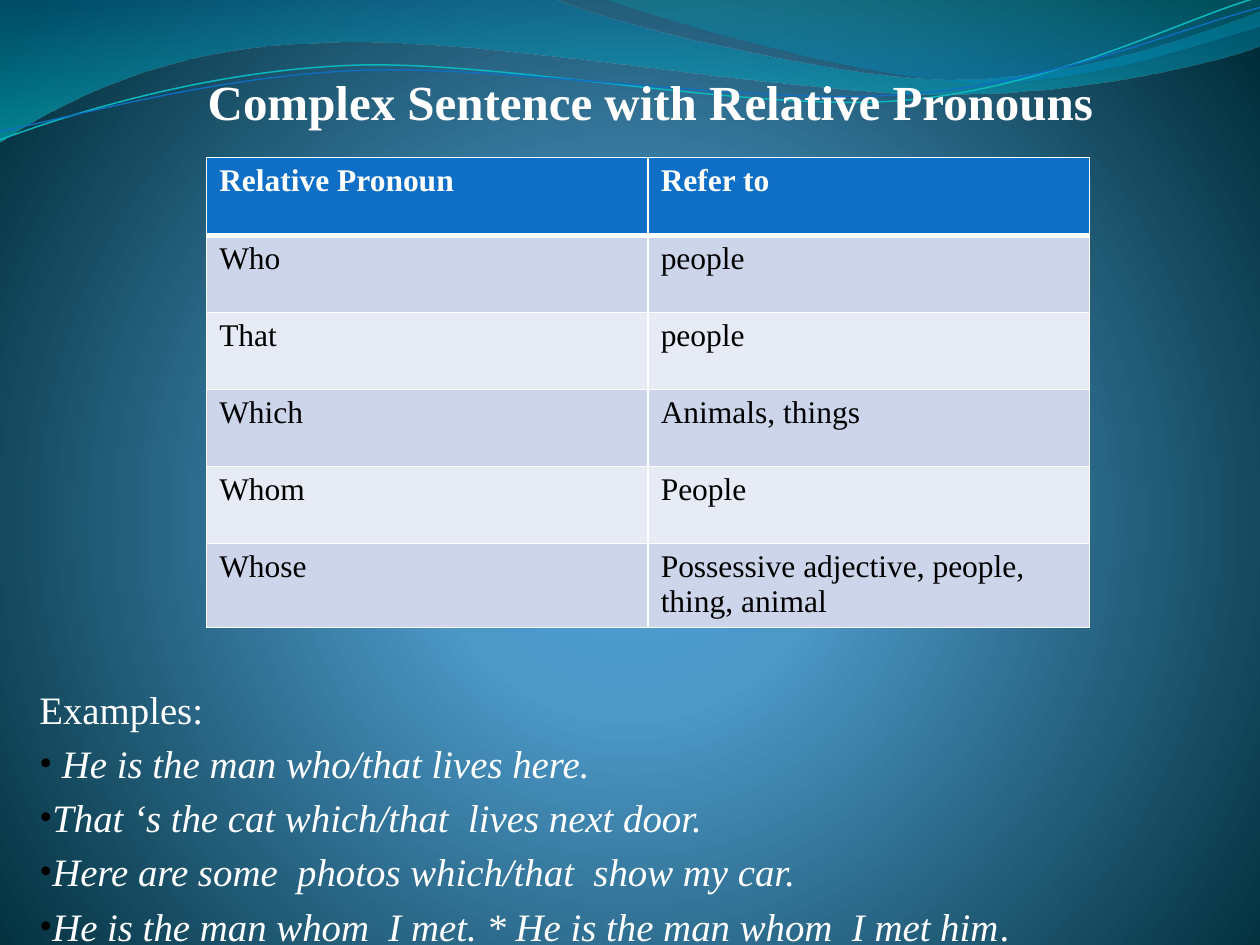
from lxml.etree import SubElement
from pptx import Presentation
from pptx.dml.color import RGBColor
from pptx.enum.text import MSO_ANCHOR, PP_ALIGN
from pptx.oxml import parse_xml
from pptx.oxml.ns import nsdecls, qn
from pptx.util import Pt

# Content
TITLE = "Complex Sentence with Relative Pronouns"
ROWS = [
    ("Relative Pronoun", "Refer to"),
    ("Who", "people"),
    ("That", "people"),
    ("Which", "Animals, things"),
    ("Whom", "People"),
    ("Whose", "Possessive adjective, people, thing, animal"),
]
HEADING = "Examples:"
EXAMPLES = [
    (" He is the man who/that lives here. ", ""),
    ("That ‘s the cat which/that  lives next door. ", ""),
    ("Here are some  photos which/that  show my car.", ""),
    ("He is the man whom  I met. * He is the man whom  I met him", "."),
]

FONT = "Times New Roman"
COLORS = {
    "white": "FFFFFF", "black": "000000", "header": "0F6FC6",
    "band_dark": "CCD5EA", "band_light": "E7EBF5",
    "teal_line": "0AB8BF", "blue_line": "0F6FC6",
    "glow": "4AA0D6", "sky": "4C98C7", "deep": "002C38",
    "wave_blue": "0074A1", "wave_teal": "00C6CF",
    "crest_teal": "00A1A9", "crest_blue": "008BBF",
}

# Curves: a start point, then steps of one point (straight) or three (Bezier)
WAVE = [(0, 0), [(316.8, -0.7)],
        [(342.7, 12.2), (478.1, 45.4), (545.8, 45.4)],
        [(614.2, 45.4), (689.8, 18.7), (720, 6.5)], [(720.7, 25.9)],
        [(707.8, 31.7), (626.4, 54.7), (537.1, 54)],
        [(447.8, 54), (275, 20.2), (185, 24.5)],
        [(92.9, 25.9), (33.1, 59.8), (-0.7, 81.4)]]
CREST = [(344.9, -0.7), [(366.5, 7.9), (491, 44.6), (553.7, 46.8)],
         [(616.3, 49.7), (691.9, 23), (720, 15.1)], [(720, 0)]]
TEAL_CURVE = [(0, 79.9), [(34.6, 67), (113.8, 41), (199.4, 37.4)],
              [(284.4, 33.8), (427, 64.1), (513.4, 57.6)],
              [(599.8, 51.1), (675.4, 10.8), (718.6, -1.4)]]
BLUE_CURVE = [(0, 74.9), [(33.8, 69.1), (118.1, 43.9), (203.8, 40.3)],
              [(290.2, 36.7), (429.8, 60.5), (516.2, 54)],
              [(601.9, 48.2), (677.5, 15.1), (720, 4.3)]]


def rgb(name):
    return RGBColor.from_string(COLORS[name])


def gradient(stops, direction):
    """Gradient fill from (position, color, opacity) stops, in percent."""
    marks = "".join(
        f'<a:gs pos="{pos * 1000}"><a:srgbClr val="{COLORS[color]}">'
        f'<a:alpha val="{opacity * 1000}"/></a:srgbClr></a:gs>'
        for pos, color, opacity in stops)
    return (f'<a:gradFill {nsdecls("a")} rotWithShape="1"><a:gsLst>{marks}</a:gsLst>'
            f'{direction}</a:gradFill>')


def add_curve(page, curve, stops=None, line=None, width=0):
    start, *steps = curve
    points = [(Pt(x), Pt(y)) for step in steps for x, y in step]
    builder = page.shapes.build_freeform(Pt(start[0]), Pt(start[1]))
    builder.add_line_segments(points, close=bool(stops))
    shape = builder.convert_to_shape()
    # Join each three straight segments of a Bezier step into one curve
    segments = iter(list(shape._element.spPr.iter(qn("a:lnTo"))))
    for step in steps:
        parts = [next(segments) for _ in step]
        if len(parts) == 3:
            bezier = parse_xml(f'<a:cubicBezTo {nsdecls("a")}/>')
            parts[0].addprevious(bezier)
            for part in parts:
                bezier.append(part[0])
                part.getparent().remove(part)
    shape.shadow.inherit = False
    shape.fill.background()
    if stops:
        shape.line.fill.background()
        empty = shape._element.spPr.find(qn("a:noFill"))
        fill = parse_xml(gradient(stops, '<a:lin ang="5400000" scaled="0"/>'))
        empty.getparent().replace(empty, fill)
    else:
        shape.line.color.rgb = rgb(line)
        shape.line.width = Pt(width)


def add_text(para, text, size=18, color="white", bold=False, italic=False):
    span = para.add_run()
    span.text = text
    span.font.name = FONT
    span.font.size = Pt(size)
    span.font.bold = bold
    span.font.italic = italic
    span.font.color.rgb = rgb(color)


def add_box(page, left, top, width, height, anchor):
    box = page.shapes.add_textbox(Pt(left), Pt(top), Pt(width), Pt(height))
    frame = box.text_frame
    frame.word_wrap = True
    frame.vertical_anchor = anchor
    frame.margin_left = frame.margin_top = frame.margin_bottom = 0
    frame.margin_right = Pt(1.4)
    return frame


def add_bullet(para):
    props = para._p.get_or_add_pPr()
    color = SubElement(props, qn("a:buClr"))
    SubElement(color, qn("a:srgbClr"), val=COLORS["black"])
    SubElement(props, qn("a:buSzPct"), val="95000")
    SubElement(props, qn("a:buFont"), typeface=FONT)
    SubElement(props, qn("a:buChar"), char="•")


def set_borders(cell, widths):
    props = cell._tc.get_or_add_tcPr()
    for index, (side, width) in enumerate(widths.items()):
        props.insert(index, parse_xml(
            f'<a:{side} {nsdecls("a")} w="{Pt(width)}"><a:solidFill>'
            f'<a:srgbClr val="{COLORS["white"]}"/></a:solidFill></a:{side}>'))


deck = Presentation()
deck.slide_width, deck.slide_height = Pt(720), Pt(540)
page = deck.slides.add_slide(deck.slide_layouts[6])

# Background glow
glow = gradient(
    [(0, "glow", 100), (25, "sky", 100), (100, "deep", 100)],
    '<a:path path="circle"><a:fillToRect l="10000" t="110000" r="10000" b="100000"/></a:path>')
page._element.cSld.insert(0, parse_xml(
    f'<p:bg {nsdecls("p", "a")}><p:bgPr>{glow}<a:effectLst/></p:bgPr></p:bg>'))

# Waves along the top
add_curve(page, WAVE, stops=[(0, "wave_blue", 45), (100, "wave_teal", 55)])
add_curve(page, CREST, stops=[(0, "crest_teal", 30), (80, "crest_blue", 45)])
add_curve(page, TEAL_CURVE, line="teal_line", width=0.85)
add_curve(page, BLUE_CURVE, line="blue_line", width=0.75)

# Title
para = add_box(page, 83.7, 18, 542.2, 56.2, MSO_ANCHOR.BOTTOM).paragraphs[0]
para.alignment = PP_ALIGN.RIGHT
add_text(para, TITLE, size=28, bold=True)

# Examples
frame = add_box(page, 22.5, 391.6, 675.4, 148.4, MSO_ANCHOR.TOP)
para = frame.paragraphs[0]
para.alignment = PP_ALIGN.JUSTIFY
add_text(para, HEADING, size=22.2)
for sentence, ending in EXAMPLES:
    para = frame.add_paragraph()
    para.alignment = PP_ALIGN.JUSTIFY
    para.line_spacing = Pt(31)
    add_bullet(para)
    add_text(para, sentence, size=22.2, italic=True)
    if ending:
        add_text(para, ending, size=22.2)

# Pronoun table
ROW_HEIGHT = 44
table = page.shapes.add_table(len(ROWS), 2, Pt(118.1), Pt(90), Pt(504.6),
                              Pt(ROW_HEIGHT * len(ROWS))).table
table.rows[0].height = Pt(ROW_HEIGHT + 0.5)
for r, row in enumerate(ROWS):
    header = r == 0
    fill = "header" if header else "band_dark" if r % 2 else "band_light"
    for c, text in enumerate(row):
        cell = table.cell(r, c)
        cell.fill.solid()
        cell.fill.fore_color.rgb = rgb(fill)
        cell.margin_bottom = Pt(1.2)
        set_borders(cell, {"lnL": 1, "lnR": 1, "lnT": 3 if r == 1 else 1,
                           "lnB": 3 if header else 1})
        add_text(cell.text_frame.paragraphs[0], text, bold=header,
                 color="white" if header else "black")

deck.save("out.pptx")
